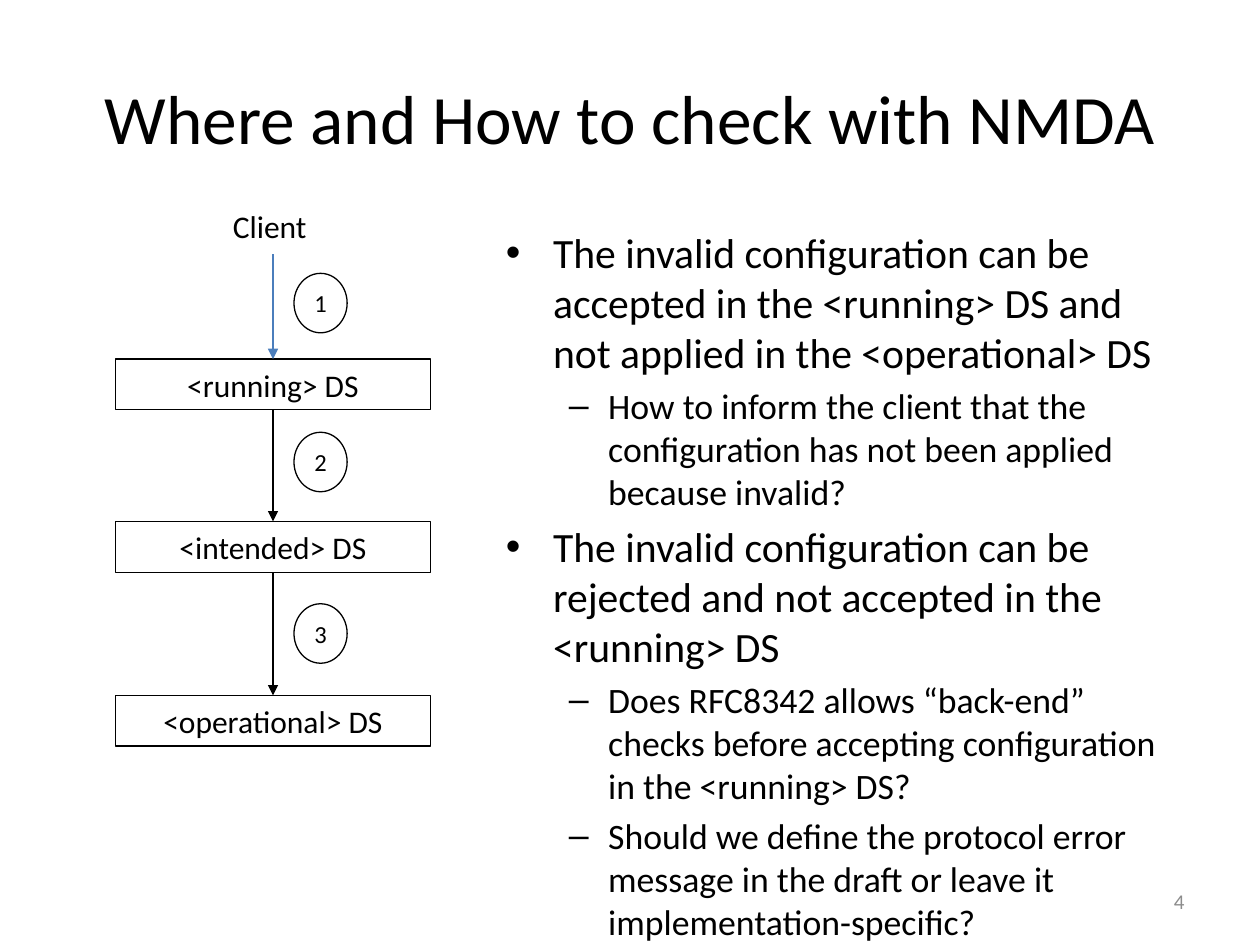
"""Build the slide on where and how to check configuration with NMDA."""
from lxml import etree
from pptx import Presentation
from pptx import util as u
from pptx.dml.color import RGBColor
from pptx.enum import shapes, text
from pptx.oxml.ns import qn

BLACK = RGBColor(0x00, 0x00, 0x00)
GRAY = RGBColor(0x8C, 0x8C, 0x8C)
BLUE = RGBColor(0x4B, 0x7E, 0xBC)
CENTER = text.PP_ALIGN.CENTER
TOP, MIDDLE = text.MSO_ANCHOR.TOP, text.MSO_ANCHOR.MIDDLE


def style(para, size, color=BLACK, align=None):
    para.font.name = "Calibri"
    para.font.size = u.Pt(size)
    para.font.color.rgb = color
    para.alignment = align


def add_label(left, top, width, height, words, size, color=BLACK,
              align=CENTER, anchor=MIDDLE, outline=None, wrap=True):
    area = [u.Pt(length) for length in (left, top, width, height)]
    if outline is None:
        box = page.shapes.add_textbox(*area)
    else:
        box = page.shapes.add_shape(outline, *area)
        box.shadow.inherit = False
        box.fill.background()
        box.line.color.rgb = BLACK
        box.line.width = u.Pt(0.75)
    frame = box.text_frame
    frame.word_wrap = wrap
    frame.vertical_anchor = anchor
    frame.text = words
    style(frame.paragraphs[0], size, color, align)


deck = Presentation()
deck.slide_width, deck.slide_height = u.Pt(720), u.Pt(540)
page = deck.slides.add_slide(deck.slide_layouts[6])

add_label(36, 21.6, 648, 90, "Where and How to check with NMDA", 39.6)

points = [
    (0, "The invalid configuration can be accepted in the <running> DS "
        "and not applied in the <operational> DS"),
    (1, "How to inform the client that the configuration has not been "
        "applied because invalid?"),
    (0, "The invalid configuration can be rejected and not accepted in "
        "the <running> DS"),
    (1, "Does RFC8342 allows “back-end” checks before accepting "
        "configuration in the <running> DS?"),
    (1, "Should we define the protocol error message in the draft or "
        "leave it implementation-specific?"),
]
levels = [("•", 23.8, 27, 27), ("–", 20.4, 58.5, 22.5)]
body = page.shapes.add_textbox(u.Pt(282), u.Pt(126), u.Pt(402), u.Pt(356.4))
body.text_frame.word_wrap = True
for index, (level, words) in enumerate(points):
    paras = body.text_frame.paragraphs
    para = body.text_frame.add_paragraph() if index else paras[0]
    bullet, size, margin, hanging = levels[level]
    para.text = words
    para.level = level
    style(para, size)
    para.space_before = u.Pt(round(size * 0.2, 1))
    props = para._p.get_or_add_pPr()
    props.set("marL", str(u.Pt(margin)))
    props.set("indent", str(-u.Pt(hanging)))
    font = etree.Element(qn("a:buFont"), typeface="Arial")
    mark = etree.Element(qn("a:buChar"), char=bullet)
    props.find(qn("a:defRPr")).addprevious(font)
    font.addnext(mark)

add_label(516, 500.4, 168, 28.8, "4", 12, GRAY, text.PP_ALIGN.RIGHT)
add_label(126, 114.5, 57, 29, "Client", 18, align=None, anchor=TOP, wrap=False)

axis, store_height = 156, 29
stages = [
    ("<running> DS", 205.2, 156.2, BLUE),
    ("<intended> DS", 298, 247, BLACK),
    ("<operational> DS", 397.4, 345, BLACK),
]
arrow_top = 145.4
for number, (name, store_top, circle_top, color) in enumerate(stages, 1):
    add_label(axis - 90, store_top, 180, store_height, name, 18,
              outline=shapes.MSO_SHAPE.RECTANGLE)
    arrow = page.shapes.add_connector(
        shapes.MSO_CONNECTOR.STRAIGHT,
        u.Pt(axis), u.Pt(arrow_top), u.Pt(axis), u.Pt(store_top))
    arrow.line.color.rgb = color
    arrow.line.width = u.Pt(0.75)
    etree.SubElement(arrow.line._get_or_add_ln(), qn("a:tailEnd"), type="triangle")
    etree.SubElement(arrow._element.spPr, qn("a:effectLst"))
    add_label(axis + 12, circle_top, 30.4, 34, str(number), 14,
              outline=shapes.MSO_SHAPE.OVAL, wrap=False)
    arrow_top = store_top + store_height

deck.save("out.pptx")
